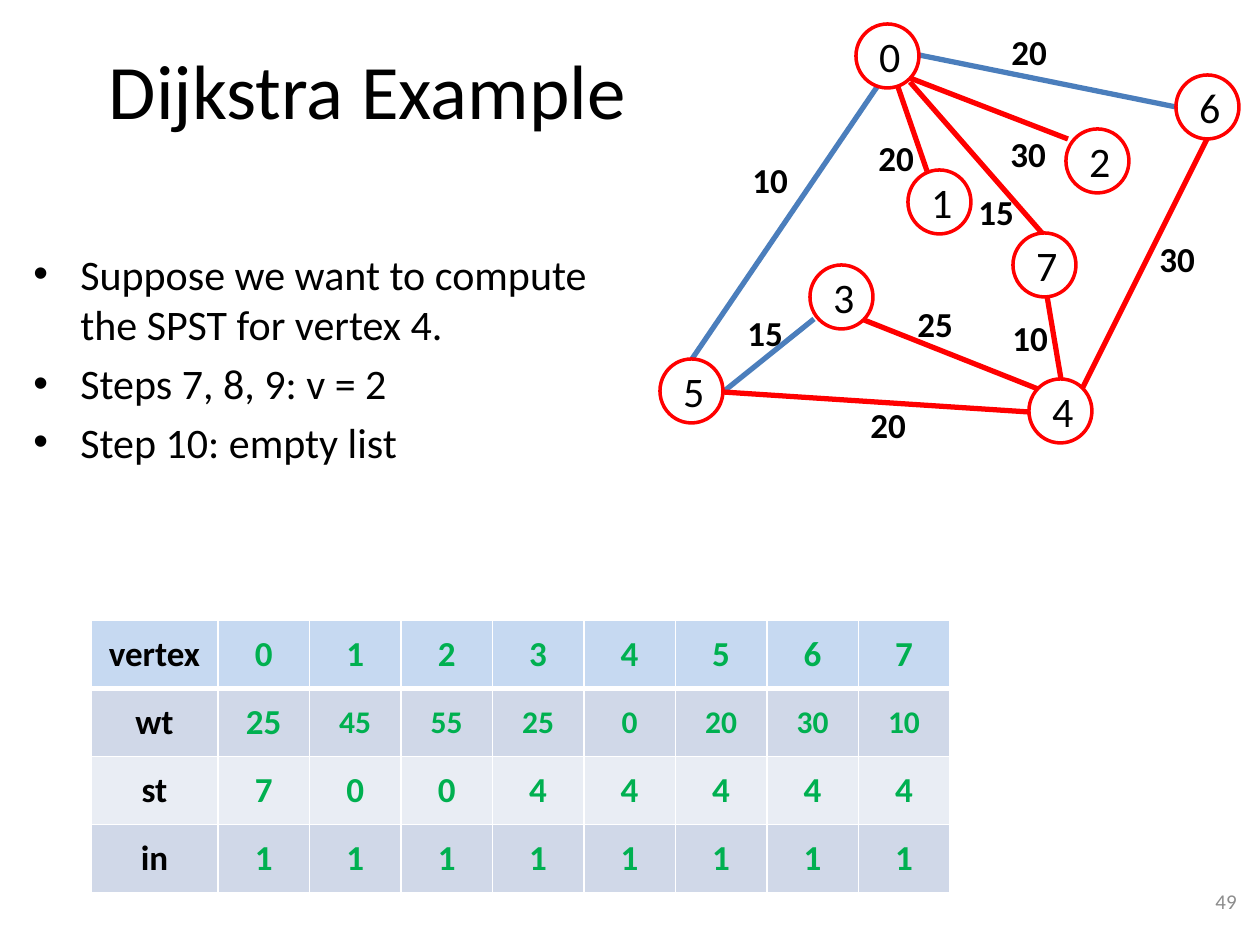
from dataclasses import dataclass

from lxml import etree
from pptx import Presentation
from pptx import util as u
from pptx.dml.color import RGBColor
from pptx.enum import shapes, text
from pptx.oxml import ns


@dataclass(frozen=True)
class Theme:
    font: str = "Calibri"
    ink: str = "000000"
    muted: str = "8C8C8C"
    red: str = "FF0000"
    blue: str = "4B7EBC"
    green: str = "00B050"
    white: str = "FFFFFF"
    rows: tuple = ("C6D9F1", "D0D8E8", "E9EDF4", "D0D8E8")
    title: int = 44
    body: int = 24
    label: int = 20
    small: int = 18
    footer: int = 12


LEFT, CENTER, RIGHT = (text.PP_ALIGN.LEFT, text.PP_ALIGN.CENTER,
                       text.PP_ALIGN.RIGHT)
TOP, MIDDLE = text.MSO_ANCHOR.TOP, text.MSO_ANCHOR.MIDDLE


def px(n):
    return round(n * 914400 / 126)


def rgb(color):
    return RGBColor.from_string(color)


def sub(parent, tag, **attrs):
    return etree.SubElement(parent, ns.qn(tag), attrs)


class Deck:
    def __init__(self, theme):
        self.t = theme
        self.prs = Presentation()
        self.prs.slide_width, self.prs.slide_height = px(1260), px(945)
        self.s = self.prs.slides.add_slide(self.prs.slide_layouts[6])

    def style(self, p, size, color, bold=False, align=LEFT):
        p.alignment = align
        for r in p.runs:
            r.font.name, r.font.size, r.font.bold = self.t.font, u.Pt(size), bold
            r.font.color.rgb = rgb(color)

    def text(self, box, words, size, color=None, bold=False, align=LEFT,
             anchor=TOP, wrap=True):
        sp = self.s.shapes.add_textbox(*map(px, box))
        tf = sp.text_frame
        tf.word_wrap, tf.vertical_anchor = wrap, anchor
        tf.text = words
        for p in tf.paragraphs:
            self.style(p, size, color or self.t.ink, bold, align)
        return tf

    def bullets(self, box, lines):
        tf = self.text(box, "\n".join(lines), self.t.body)
        for p in tf.paragraphs:
            p.space_before = u.Pt(self.t.body * 0.2)
            pPr = p._p.get_or_add_pPr()
            pPr.set("marL", str(px(47)))
            pPr.set("indent", str(-px(47)))
            sub(pPr, "a:buFont", typeface="Arial")
            sub(pPr, "a:buChar", char="•")

    def edge(self, ends, color):
        c = self.s.shapes.add_connector(shapes.MSO_CONNECTOR.STRAIGHT,
                                        *map(px, ends))
        c.line.color.rgb, c.line.width = rgb(color), u.Pt(3)
        sub(c._element.spPr, "a:effectLst")

    def node(self, x, y, name):
        sp = self.s.shapes.add_shape(shapes.MSO_SHAPE.OVAL,
                                     *map(px, (x, y, 63, 64)))
        sp.shadow.inherit = False
        sp.fill.background()
        sp.line.color.rgb, sp.line.width = rgb(self.t.red), u.Pt(2)
        self.text((x, y, 58, 63), f" {name}", self.t.body, align=CENTER)

    def weight(self, x, y, value):
        self.text((x, y, 62, 55), str(value), self.t.label, bold=True, wrap=False)

    def border(self, cell, side, width):
        ln = sub(cell._tc.get_or_add_tcPr(), f"a:ln{side}", w=str(u.Pt(width)))
        sub(sub(ln, "a:solidFill"), "a:srgbClr", val=self.t.white)

    def table(self, box, first_width, rows):
        x, y, w, h = box
        n = len(rows[0])
        tbl = self.s.shapes.add_table(len(rows), n, *map(px, box)).table
        for j, col in enumerate(tbl.columns):
            col.width = px((w - first_width) / (n - 1) if j else first_width)
        for i, row in enumerate(rows):
            tbl.rows[i].height = px(h / len(rows))
            for j, value in enumerate(row):
                cell = tbl.cell(i, j)
                cell.text, cell.vertical_anchor = str(value), MIDDLE
                size = self.t.small if i == 1 and j > 1 else self.t.label
                color = self.t.green if j else self.t.ink
                self.style(cell.text_frame.paragraphs[0], size, color, True, CENTER)
                widths = {"L": 1, "R": 1, "T": 3 if i == 1 else 1,
                          "B": 3 if i == 0 else 1}
                for side, width in widths.items():
                    self.border(cell, side, width)
                cell.fill.solid()
                cell.fill.fore_color.rgb = rgb(self.t.rows[i])


theme = Theme()
deck = Deck(theme)

deck.text((63, 10, 609, 157), "Dijkstra Example", theme.title,
          align=CENTER, anchor=MIDDLE)
deck.bullets((21, 242, 745, 459), [
    "Suppose we want to compute\vthe SPST for vertex 4.",
    "Steps 7, 8, 9: v = 2",
    "Step 10: empty list",
])
deck.text((955, 876, 294, 50), "49", theme.footer, theme.muted,
          align=RIGHT, anchor=MIDDLE)

deck.table((91, 620, 859, 273), 127, [
    ["vertex", *range(8)],
    ["wt", 25, 45, 55, 25, 0, 20, 30, 10],
    ["st", 7, 0, 0, 4, 4, 4, 4, 4],
    ["in"] + [1] * 8,
])

edges = [
    ((898, 87, 927, 171), theme.red, (866, 130, 20)),
    ((919, 55, 1176, 107), theme.blue, (999, 24, 20)),
    ((910, 78, 1068, 139), theme.red, (998, 126, 30)),
    ((877, 87, 692, 359), theme.blue, (740, 152, 10)),
    ((910, 82, 1042, 233), theme.red, (966, 184, 15)),
    ((723, 392, 814, 319), theme.blue, (735, 305, 15)),
    ((864, 320, 1038, 389), theme.red, (905, 296, 25)),
    ((1047, 296, 1061, 379), theme.red, (1000, 310, 10)),
    ((1207, 139, 1082, 389), theme.red, (1147, 231, 30)),
    ((723, 392, 1029, 412), theme.red, (858, 397, 20)),
]
for ends, color, weight in edges:
    deck.edge(ends, color)
    deck.weight(*weight)

nodes = [(856, 24), (908, 170), (1066, 129), (810, 265),
         (1029, 379), (660, 359), (1176, 75), (1013, 233)]
for name, (x, y) in enumerate(nodes):
    deck.node(x, y, name)

deck.prs.save("out.pptx")
